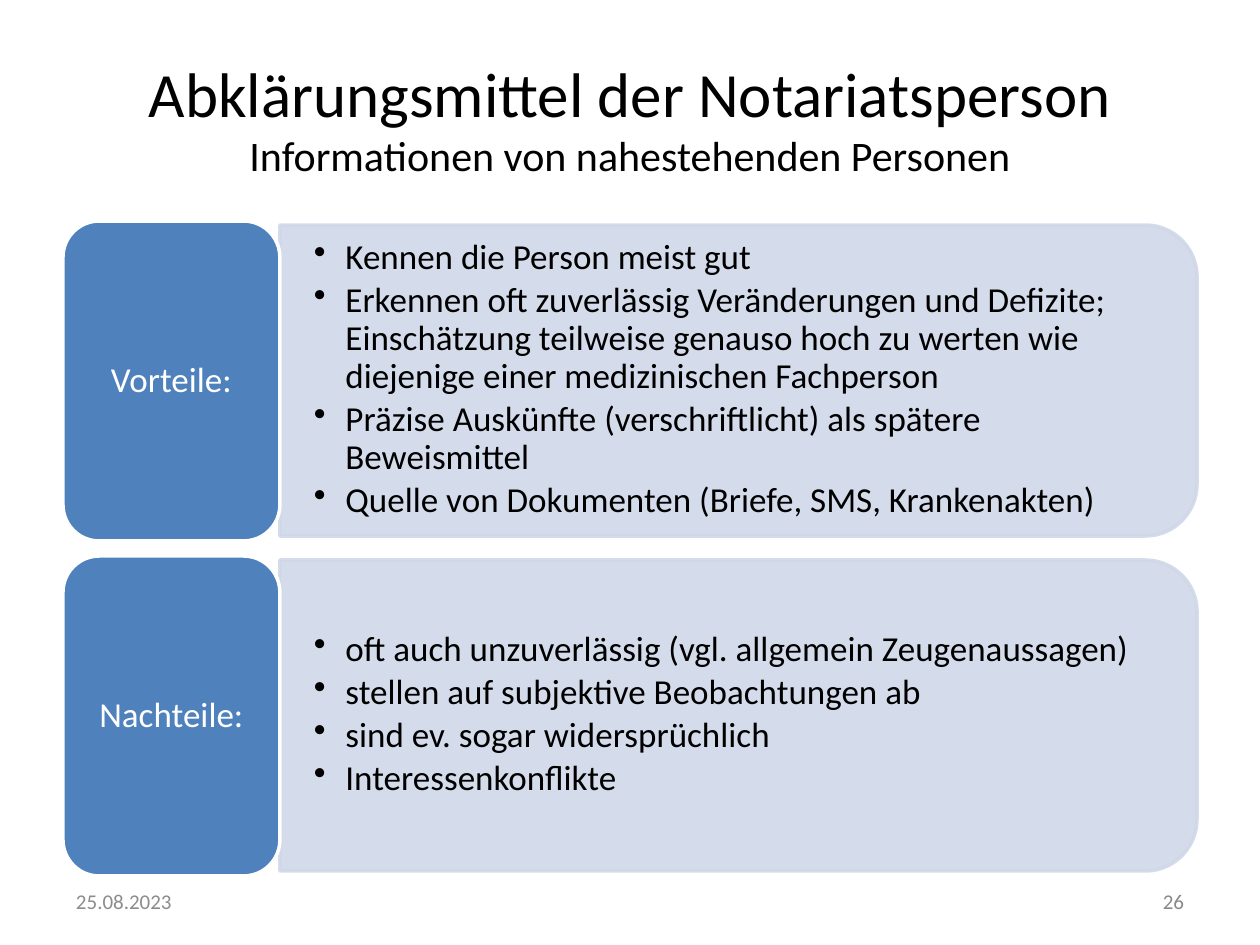
from dataclasses import dataclass

from lxml import etree
from pptx import Presentation
from pptx.dml.color import RGBColor
from pptx.enum.shapes import MSO_SHAPE
from pptx.enum.text import MSO_ANCHOR, PP_ALIGN
from pptx.oxml.ns import qn
from pptx.util import Pt

LEFT, MID, RIGHT = PP_ALIGN.LEFT, PP_ALIGN.CENTER, PP_ALIGN.RIGHT
CENTRE = MSO_ANCHOR.MIDDLE
ROUND, HALF = MSO_SHAPE.ROUNDED_RECTANGLE, MSO_SHAPE.ROUND_2_SAME_RECTANGLE


@dataclass(frozen=True)
class Theme:
    font: str = "Calibri"
    ink: str = "000000"
    white: str = "FFFFFF"
    blue: str = "4F81BD"
    pale: str = "D0D8E8"
    grey: str = "8C8C8C"
    number: str = "898989"
    head: int = 36
    sub: int = 24
    body: int = 20
    small: int = 12


THEME = Theme()
ROWS = [
    ("Vorteile:", [
        "Kennen die Person meist gut",
        "Erkennen oft zuverlässig Veränderungen und Defizite; Einschätzung "
        "teilweise genauso hoch zu werten wie diejenige einer medizinischen "
        "Fachperson",
        "Präzise Auskünfte (verschriftlicht) als spätere Beweismittel",
        "Quelle von Dokumenten (Briefe, SMS, Krankenakten)",
    ]),
    ("Nachteile:", [
        "oft auch unzuverlässig (vgl. allgemein Zeugenaussagen)",
        "stellen auf subjektive Beobachtungen ab",
        "sind ev. sogar widersprüchlich",
        "Interessenkonflikte",
    ]),
]


def px(n):
    """Turn px, 126 to the inch, into EMU."""
    return round(n * 914400 / 126)


def add_run(para, text, size, color):
    run = para.add_run()
    run.text = text
    run.font.name = THEME.font
    run.font.size = Pt(size)
    run.font.color.rgb = RGBColor.from_string(color)


def set_frame(shape, side, top):
    frame = shape.text_frame
    frame.word_wrap = True
    frame.vertical_anchor = CENTRE
    frame.margin_left = frame.margin_right = px(side)
    frame.margin_top = frame.margin_bottom = px(top)
    return frame


def add_box(slide, box, side=13, top=6):
    return set_frame(slide.shapes.add_textbox(*map(px, box)), side, top)


def add_form(slide, kind, box, fill, line):
    shape = slide.shapes.add_shape(kind, *map(px, box))
    shape.shadow.inherit = False
    shape.fill.solid()
    shape.fill.fore_color.rgb = RGBColor.from_string(fill)
    shape.line.color.rgb = RGBColor.from_string(line)
    shape.line.width = Pt(2)
    return shape


def add_panel(slide, box):
    """Place a half-rounded form, turned so its round side faces right."""
    x, y, w, h = box
    turned = (x + (w - h) // 2, y + (h - w) // 2, h, w)
    shape = add_form(slide, HALF, turned, THEME.pale, THEME.pale)
    shape.rotation = 90
    for color in shape.element.spPr.iter(qn("a:srgbClr")):
        etree.SubElement(color, qn("a:alpha"), val="90000")


def add_list(slide, box, items):
    frame = add_box(slide, box, 34, 18)
    for i, item in enumerate(items):
        para = frame.paragraphs[0] if i == 0 else frame.add_paragraph()
        para.line_spacing = 0.9
        para.space_after = Pt(3)
        props = para._p.get_or_add_pPr()
        props.set("marL", "228600")
        props.set("indent", "-228600")
        etree.SubElement(props, qn("a:buChar"), char="•")
        add_run(para, item, THEME.body, THEME.ink)


def add_row(slide, box, label, items):
    x, y, w, h = box
    tab = 217
    add_panel(slide, (x + tab, y + 4, w - tab, h - 9))
    add_list(slide, (x + tab, y + 18, w - tab - 16, h - 39), items)
    shape = add_form(slide, ROUND, (x, y, tab, h), THEME.blue, THEME.white)
    para = set_frame(shape, 10, 5).paragraphs[0]
    para.alignment = MID
    para.line_spacing = 0.9
    add_run(para, label, THEME.body, THEME.white)


def add_title(slide, box):
    para = add_box(slide, box).paragraphs[0]
    para.alignment = MID
    add_run(para, "Abklärungsmittel der Notariatsperson", THEME.head, THEME.ink)
    para.add_line_break()
    add_run(para, "Informationen von nahestehenden Personen", THEME.sub, THEME.ink)


def add_foot(slide, box):
    x, y, w, h = box
    part = 294
    for left, text, align, color in (
        (x, "25.08.2023", LEFT, THEME.grey),
        (x + w - part, "26", RIGHT, THEME.number),
    ):
        para = add_box(slide, (left, y, part, h)).paragraphs[0]
        para.alignment = align
        add_run(para, text, THEME.small, color)


def main():
    deck = Presentation()
    deck.slide_width, deck.slide_height = px(1260), px(945)
    slide = deck.slides.add_slide(deck.slide_layouts[6])
    add_title(slide, (63, 38, 1134, 158))
    for i, (label, items) in enumerate(ROWS):
        add_row(slide, (63, 221 + i * 335, 1134, 320), label, items)
    add_foot(slide, (63, 876, 1134, 50))
    deck.save("out.pptx")


if __name__ == "__main__":
    main()
